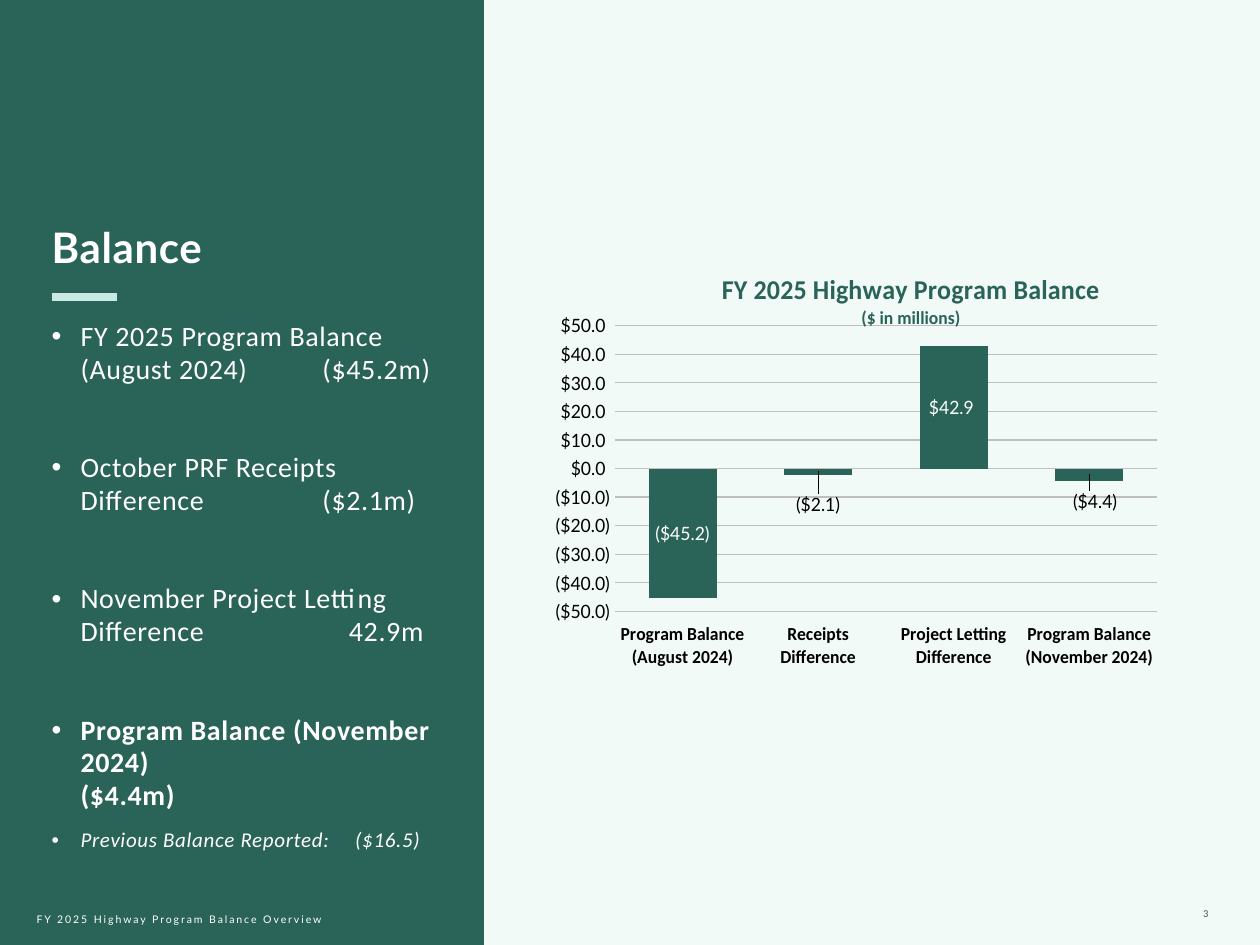
from typing import NamedTuple

from lxml import etree
from pptx import Presentation
from pptx.chart.data import CategoryChartData
from pptx.dml.color import RGBColor
from pptx.enum import chart as ch, shapes, text
from pptx.oxml import ns, parse_xml
from pptx.util import Inches, Pt

GREEN = RGBColor(0x2A, 0x63, 0x57)
MINT = RGBColor(0xCB, 0xE9, 0xE3)
PALE_MINT = RGBColor(0xF2, 0xFA, 0xF8)
WHITE = RGBColor(0xFF, 0xFF, 0xFF)
BLACK = RGBColor(0, 0, 0)
GRAY = RGBColor(0x4D, 0x4D, 0x4F)
GRID_GRAY = RGBColor(0xBF, 0xBF, 0xBF)
DOLLARS = '"$"#,##0.0_);\\("$"#,##0.0\\)'


class Item(NamedTuple):
    label: str
    amount: str
    tab: float  # inches from the box's left edge; 0 puts the amount on its own line
    before: float = 37.4
    size: float = 16
    bold: bool = False
    italic: bool = False


class Change(NamedTuple):
    label: str
    millions: float
    label_shift: tuple | None = None  # moves the value off a short bar


ITEMS = [
    Item("FY 2025 Program Balance (August 2024)", "($45.2m)", 2.15, before=0),
    Item("October PRF Receipts Difference", "($2.1m)", 2.15),
    Item("November Project Letting Difference", "42.9m", 2.36),
    Item("Program Balance (November 2024)", "($4.4m)", 0, bold=True),
    Item("Previous Balance Reported:", "($16.5)", 2.41, before=9, size=12, italic=True),
]
CHANGES = [
    Change("Program Balance (August 2024)", -45.2),
    Change("Receipts Difference", -2.1, (0, 0.075)),
    Change("Project Letting Difference", 42.9),
    Change("Program Balance (November 2024)", -4.4, (0.01, 0.06)),
]


def style(font, size: float, color: RGBColor, name: str, bold=False, italic=False) -> None:
    font.size, font.name = Pt(size), name
    font.bold, font.italic = bold, italic
    font.color.rgb = color


def add_run(paragraph, words: str, size: float, color: RGBColor, name: str,
            spacing: float = 0, bold=False, italic=False) -> None:
    run = paragraph.add_run()
    run.text = words
    style(run.font, size, color, name, bold, italic)
    if spacing:
        run.font._element.set("spc", str(round(spacing * 100)))


def prepare_frame(frame, anchor, vertical_inset: float = 0) -> None:
    frame.word_wrap = True
    frame.vertical_anchor = anchor
    frame.margin_left = frame.margin_right = 0
    frame.margin_top = frame.margin_bottom = Inches(vertical_inset)


def add_small_text(slide, box: tuple, words: str, color: RGBColor, font: str,
                   anchor, align) -> None:
    frame = slide.shapes.add_textbox(*map(Inches, box)).text_frame
    prepare_frame(frame, anchor, 0.05)
    frame.paragraphs[0].alignment = align
    add_run(frame.paragraphs[0], words, 6, color, font, spacing=1.1)


def add_bullet(paragraph, item: Item) -> None:
    props = paragraph._p.get_or_add_pPr()
    props.set("marL", str(Inches(0.23)))
    props.set("indent", str(-Inches(0.23)))
    etree.SubElement(props, ns.qn("a:buFont"), typeface="Arial")
    etree.SubElement(props, ns.qn("a:buChar"), char="•")
    if item.tab:
        tabs = etree.SubElement(props, ns.qn("a:tabLst"))
        etree.SubElement(tabs, ns.qn("a:tab"), pos=str(Inches(item.tab)), algn="l")
    paragraph.line_spacing = 0.98
    paragraph.space_before = Pt(item.before)
    look = (item.size, WHITE, "Calibri", 0.4, item.bold, item.italic)
    if item.tab:
        add_run(paragraph, f"{item.label}\t{item.amount}", *look)
    else:
        add_run(paragraph, item.label, *look)
        paragraph.add_line_break()
        add_run(paragraph, item.amount, *look)


def manual_layout(x: float, y: float, size: tuple = ()):
    """Build a chart layout; a size makes it fix the inner plot area."""
    values = [("xMode", "edge"), ("yMode", "edge")] if size else []
    values += [("x", x), ("y", y)] + list(zip("wh", size))
    if size:
        values.insert(0, ("layoutTarget", "inner"))
    parts = "".join(f'<c:{tag} val="{value}"/>' for tag, value in values)
    return parse_xml(f'<c:layout {ns.nsdecls("c")}><c:manualLayout>{parts}'
                     '</c:manualLayout></c:layout>')


def set_layout(parent, layout, after: str | None = None) -> None:
    for old in parent.findall(ns.qn("c:layout")):
        parent.remove(old)
    if after:
        parent.find(ns.qn(after)).addnext(layout)
    else:
        parent.insert(0, layout)


def add_balance_chart(slide) -> None:
    data = CategoryChartData(number_format=DOLLARS)
    data.categories = [change.label for change in CHANGES]
    data.add_series("Series 1", [change.millions for change in CHANGES])
    chart = slide.shapes.add_chart(
        ch.XL_CHART_TYPE.COLUMN_CLUSTERED,
        *map(Inches, (4.41, 2.05, 4.92, 3.5)), data).chart
    style(chart.font, 10, BLACK, "Lato")
    chart.has_legend = False

    title = chart.chart_title.text_frame
    add_run(title.paragraphs[0], "FY 2025 Highway Program Balance", 15.5, GREEN, "Calibri", bold=True)
    add_run(title.add_paragraph(), "($ in millions)", 10.5, GREEN, "Calibri", bold=True)
    title_layout = manual_layout(0.23, 0.02)
    holder = title_layout[0]
    for position, tag in enumerate(("c:xMode", "c:yMode")):
        mode = etree.Element(ns.qn(tag), val="edge")
        holder.insert(position, mode)
    set_layout(chart.chart_title._element, title_layout, "c:tx")
    chart.chart_title.include_in_layout = False
    set_layout(chart._chartSpace.chart.plotArea, manual_layout(0.056, 0.153, (0.913, 0.648)))

    steps = chart.category_axis
    steps.tick_label_position = ch.XL_TICK_LABEL_POSITION.LOW
    steps.major_tick_mark = ch.XL_TICK_MARK.NONE
    style(steps.tick_labels.font, 10.5, BLACK, "Calibri", bold=True)
    millions = chart.value_axis
    millions.minimum_scale, millions.maximum_scale, millions.major_unit = -50, 50, 10
    millions.major_tick_mark = ch.XL_TICK_MARK.NONE
    millions.format.line.fill.background()
    style(millions.tick_labels.font, 10.5, BLACK, "Lato")
    millions.tick_labels.number_format = DOLLARS
    millions.tick_labels.number_format_is_linked = False
    for line in (steps.format.line, millions.major_gridlines.format.line):
        line.color.rgb = GRID_GRAY
        line.width = Pt(0.75)

    plot = chart.plots[0]
    plot.gap_width, plot.overlap, plot.vary_by_categories = 100, -24, False
    bars = plot.series[0]
    bars.invert_if_negative = False
    bars.format.fill.solid()
    bars.format.fill.fore_color.rgb = GREEN
    labels = bars.data_labels
    labels.show_value = True
    labels.position = ch.XL_LABEL_POSITION.CENTER
    labels.number_format, labels.number_format_is_linked = DOLLARS, False
    style(labels.font, 10.5, WHITE, "Lato")
    for index, change in enumerate(CHANGES):
        if change.label_shift:
            label = bars.points[index].data_label
            style(label.font, 10.5, BLACK, "Lato")
            label.position = ch.XL_LABEL_POSITION.CENTER
            set_layout(label._dLbl, manual_layout(*change.label_shift), "c:idx")


def main() -> None:
    deck = Presentation()
    deck.slide_width, deck.slide_height = Inches(10), Inches(7.5)
    slide = deck.slides.add_slide(deck.slide_layouts[5])
    slide.background.fill.solid()
    slide.background.fill.fore_color.rgb = PALE_MINT

    panel = slide.shapes.add_shape(
        shapes.MSO_SHAPE.RECTANGLE, 0, 0, Inches(3.84), deck.slide_height)
    panel.shadow.inherit = False
    panel.fill.solid()
    panel.fill.fore_color.rgb = GREEN
    panel.line.fill.background()

    title = slide.shapes.title
    panel._element.addnext(title._element)
    title.left, title.top, title.width, title.height = map(Inches, (0.41, 1.76, 3.04, 0.42))
    prepare_frame(title.text_frame, text.MSO_ANCHOR.TOP)
    heading = title.text_frame.paragraphs[0]
    heading.alignment = text.PP_ALIGN.LEFT
    add_run(heading, "Balance", 24, WHITE, "Lato", spacing=0.4, bold=True)

    rule = slide.shapes.add_connector(
        shapes.MSO_CONNECTOR.STRAIGHT, *map(Inches, (0.41, 2.36, 0.93, 2.36)))
    rule.line.color.rgb = MINT
    rule.line.width = Pt(4.5)
    etree.SubElement(rule._element.spPr, ns.qn("a:effectLst"))

    body = slide.shapes.add_textbox(*map(Inches, (0.41, 2.54, 3.04, 4.52))).text_frame
    prepare_frame(body, text.MSO_ANCHOR.TOP)
    for index, item in enumerate(ITEMS):
        add_bullet(body.add_paragraph() if index else body.paragraphs[0], item)

    add_balance_chart(slide)
    add_small_text(slide, (0.29, 7.15, 2.61, 0.3), "FY 2025 Highway Program Balance Overview",
                   WHITE, "Lato", text.MSO_ANCHOR.MIDDLE, text.PP_ALIGN.LEFT)
    add_small_text(slide, (8.62, 6.95, 0.97, 0.4), "3",
                   GRAY, "Calibri", text.MSO_ANCHOR.BOTTOM, text.PP_ALIGN.RIGHT)
    deck.save("out.pptx")


if __name__ == "__main__":
    main()
